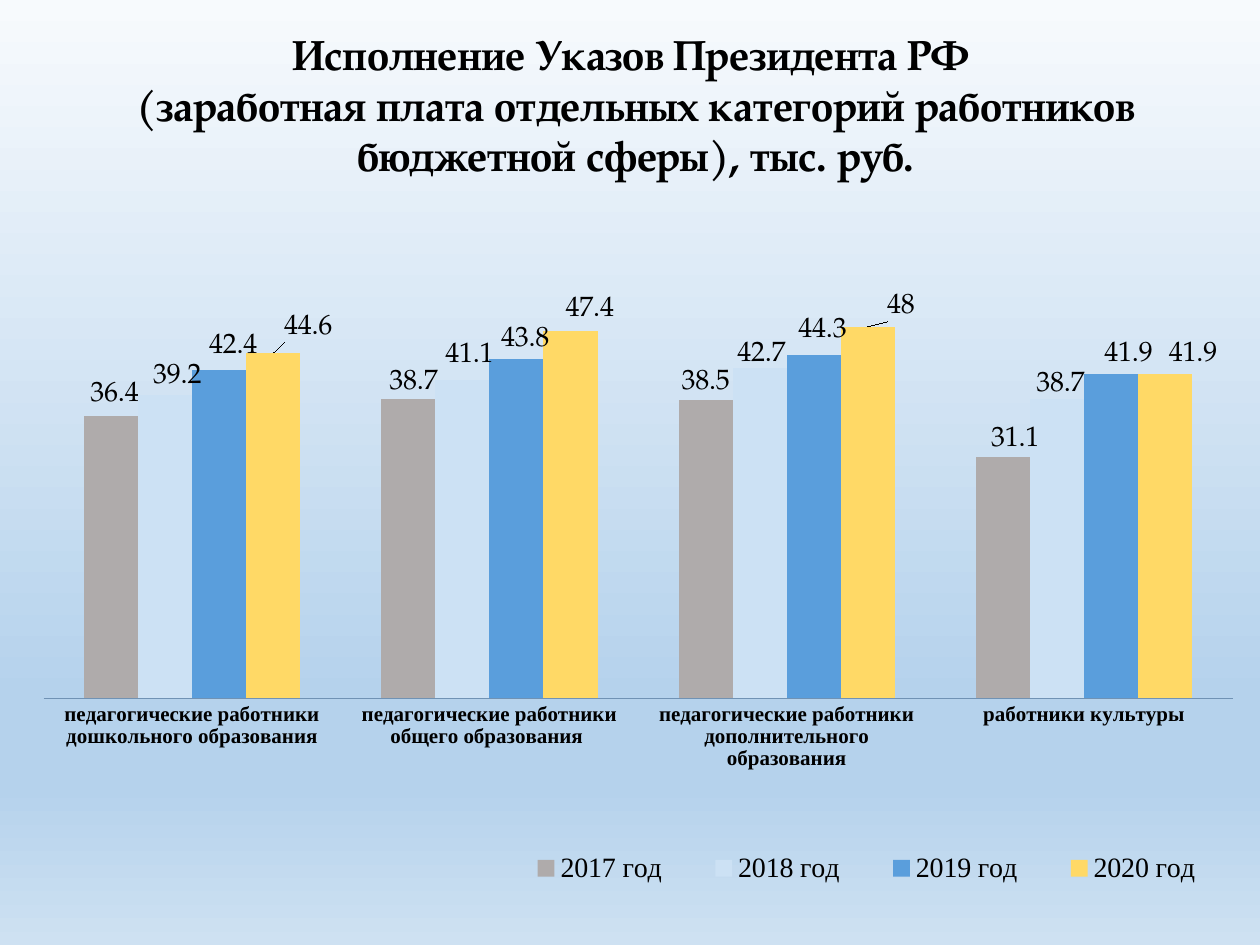
from pptx import Presentation
from pptx.chart.data import CategoryChartData
from pptx.dml.color import RGBColor
from pptx.enum import chart as ch, text
from pptx.oxml import parse_xml
from pptx.oxml.ns import nsdecls
from pptx.util import Pt

BLACK = RGBColor(0, 0, 0)
AXIS_BLUE = RGBColor(0x70, 0x92, 0xB4)
GREY = RGBColor(0xAF, 0xAB, 0xAB)
PALE_BLUE = RGBColor(0xCC, 0xE1, 0xF4)
BLUE = RGBColor(0x5A, 0x9E, 0xDC)
YELLOW = RGBColor(0xFF, 0xD9, 0x66)
HEADING_FONT, LABEL_FONT = "TeX Gyre Pagella", "Times New Roman"

BACKGROUND = [(0, "F7FAFD"), (74, "B5D2EC"), (83, "B5D2EC"), (100, "CEE1F2")]
HEADING = [
    "Исполнение Указов Президента РФ ",
    "(заработная плата отдельных категорий работников бюджетной сферы), тыс. руб.",
]
WORKERS = [
    "педагогические работники дошкольного образования",
    "педагогические работники общего образования ",
    "педагогические работники дополнительного образования",
    "работники культуры",
]
YEARS = [
    {"name": "2017 год ", "colour": GREY, "salaries": [36.4, 38.7, 38.5, 31.1],
     "label_shifts": [(2, -1), (3, 2), (0, 1), (7, 1)]},
    {"name": "2018 год ", "colour": PALE_BLUE, "salaries": [39.2, 41.1, 42.7, 38.7],
     "label_shifts": [(7, 1), (4, -3), (1, 4), (2, 3)]},
    {"name": "2019 год ", "colour": BLUE, "salaries": [42.4, 43.8, 44.3, 41.9],
     "label_shifts": [(8, -2), (5, 0), (5, -3), (10, 0)]},
    {"name": "2020 год", "colour": YELLOW, "salaries": [44.6, 47.4, 48, 41.9],
     "label_shifts": [(20, -3), (11, -1), (19, 0), (16, 0)]},
]

HEADING_BOX = (14.4, 13, 697.7, 94.3)
CHART_BOX = (13.7, 100.1, 697.7, 430.6)
CHART_WIDTH, CHART_HEIGHT = CHART_BOX[2:]
EDGE = {"xMode": "edge", "yMode": "edge"}
PLOT_AREA = {"layoutTarget": "inner", **EDGE,
             "x": 0.016, "y": 0.078, "w": 0.974, "h": 0.616}
LEGEND_AREA = {**EDGE, "x": 0.39, "y": 0.89, "w": 0.6, "h": 0.06}

COLUMNS = {"gap_width": 150, "overlap": 0, "vary_by_categories": False}
SALARY_AXIS = {"minimum_scale": 0, "maximum_scale": 60,
               "has_major_gridlines": False, "visible": False}
LEGEND = {"position": ch.XL_LEGEND_POSITION.TOP, "include_in_layout": False}

NO_LEADER_LINES = (
    f'<c:extLst {nsdecls("c")}><c:ext uri="{{CE6537A1-D6FC-4f65-9D91-7224C49458BB}}"'
    ' xmlns:c15="http://schemas.microsoft.com/office/drawing/2012/chart">'
    '<c15:showLeaderLines val="0"/></c:ext></c:extLst>')


def set_all(target, values):
    for key, value in values.items():
        setattr(target, key, value)


def style(font, name, size, bold=False):
    set_all(font, {"name": name, "size": Pt(size), "bold": bold})
    font.color.rgb = BLACK


def layout(values):
    parts = "".join(f'<c:{key} val="{value}"/>' for key, value in values.items())
    return parse_xml(f'<c:layout {nsdecls("c")}><c:manualLayout>{parts}'
                     '</c:manualLayout></c:layout>')


def remove_layout(parent):
    for old in parent.xpath("./c:layout"):
        parent.remove(old)


def paint_background(slide):
    fill = slide.background.fill
    fill.gradient()
    fill.gradient_angle = 270
    stops = slide.element.xpath(".//a:gsLst")[0]
    for stop in list(stops):
        stops.remove(stop)
    for percent, colour in BACKGROUND:
        stops.append(parse_xml(f'<a:gs {nsdecls("a")} pos="{percent * 1000}">'
                               f'<a:srgbClr val="{colour}"/></a:gs>'))


def add_heading(slide):
    frame = slide.shapes.add_textbox(*map(Pt, HEADING_BOX)).text_frame
    frame.word_wrap = True
    frame.text = "\n".join(HEADING)
    for line in frame.paragraphs:
        line.alignment = text.PP_ALIGN.CENTER
        style(line.runs[0].font, HEADING_FONT, 24, True)


def format_axes(chart):
    set_all(chart.value_axis, SALARY_AXIS)
    workers_axis = chart.category_axis
    workers_axis.major_tick_mark = ch.XL_TICK_MARK.NONE
    workers_axis.format.line.color.rgb = AXIS_BLUE
    workers_axis.format.line.width = Pt(0.5)
    style(workers_axis.tick_labels.font, LABEL_FONT, 12, True)


def format_legend(chart):
    chart.has_legend = True
    set_all(chart.legend, LEGEND)
    style(chart.legend.font, LABEL_FONT, 16)


def place_parts(chart):
    plot_area = chart.element.xpath(".//c:plotArea")[0]
    remove_layout(plot_area)
    plot_area.insert(0, layout(PLOT_AREA))
    legend = chart.element.xpath(".//c:legend")[0]
    remove_layout(legend)
    legend.xpath("./c:legendPos")[0].addnext(layout(LEGEND_AREA))


def format_year(series, year):
    series.format.fill.solid()
    series.format.fill.fore_color.rgb = year["colour"]
    series.invert_if_negative = False
    series.data_labels.show_value = True
    style(series.data_labels.font, HEADING_FONT, 16)
    for index in range(len(WORKERS)):
        label = series.points[index].data_label
        style(label.font, HEADING_FONT, 16)
        label.position = ch.XL_LABEL_POSITION.OUTSIDE_END


def shift_labels(labels, shifts):
    for index, (right, down) in zip(labels.xpath("./c:dLbl/c:idx"), shifts):
        index.addnext(layout({"x": right / CHART_WIDTH, "y": down / CHART_HEIGHT}))
    labels.append(parse_xml(NO_LEADER_LINES))


def add_salaries(slide):
    salaries = CategoryChartData()
    salaries.categories = WORKERS
    for year in YEARS:
        salaries.add_series(year["name"], year["salaries"])
    chart = slide.shapes.add_chart(
        ch.XL_CHART_TYPE.COLUMN_CLUSTERED, *map(Pt, CHART_BOX), salaries).chart
    chart.has_title = False
    style(chart.font, "Calibri", 18)
    columns = chart.plots[0]
    set_all(columns, COLUMNS)
    format_axes(chart)
    format_legend(chart)
    place_parts(chart)
    for series, year in zip(columns.series, YEARS):
        format_year(series, year)
    for labels, year in zip(chart.element.xpath(".//c:ser/c:dLbls"), YEARS):
        shift_labels(labels, year["label_shifts"])


def main():
    deck = Presentation()
    deck.slide_width, deck.slide_height = Pt(720), Pt(540)
    slide = deck.slides.add_slide(deck.slide_layouts[6])
    paint_background(slide)
    add_heading(slide)
    add_salaries(slide)
    deck.save("out.pptx")


if __name__ == "__main__":
    main()
